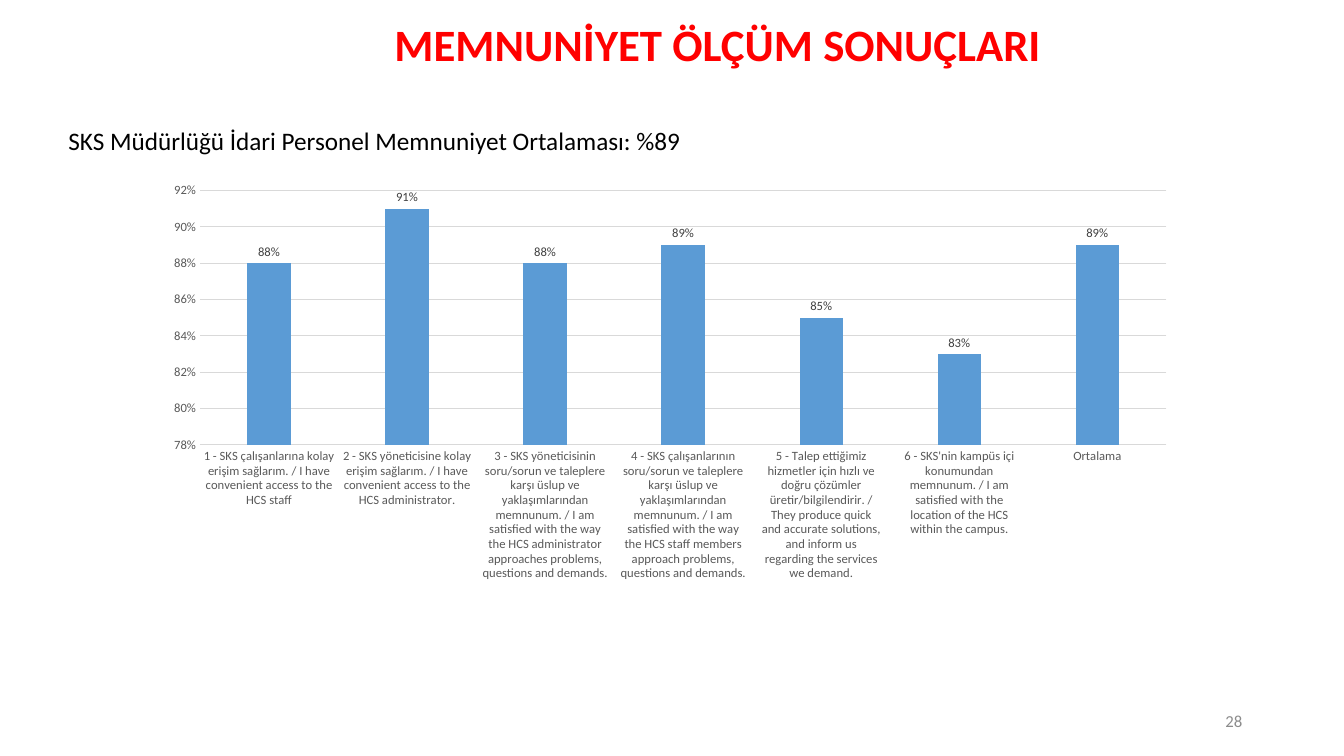
import pptx
import pptx.chart.data
import pptx.dml.color
import pptx.enum.chart
import pptx.enum.text
import pptx.oxml
import pptx.oxml.ns
import pptx.util

WIDTH, HEIGHT = 13.33, 7.5
FONT = "Calibri"
ALIGN = pptx.enum.text.PP_ALIGN
ANCHOR = pptx.enum.text.MSO_ANCHOR

TEXTS = [
    dict(text="28", at=(9.42, 6.95, 3, 0.4), size=12, color="8C8C8C",
         align=ALIGN.RIGHT, anchor=ANCHOR.MIDDLE),
    dict(text="MEMNUNİYET ÖLÇÜM SONUÇLARI", at=(2.67, 0.12, 8.9, 0.64), size=32,
         color="FF0000", align=ALIGN.CENTER, bold=True),
    dict(text="SKS Müdürlüğü İdari Personel Memnuniyet Ortalaması: %89",
         at=(0.58, 1.19, 10.69, 0.4), size=18, color="000000"),
]
SCORES = [
    ("1 - SKS çalışanlarına kolay erişim sağlarım. / I have convenient access "
     "to the HCS staff", 0.88),
    ("2 - SKS yöneticisine kolay erişim sağlarım. / I have convenient access "
     "to the HCS administrator.", 0.91),
    ("3 - SKS yöneticisinin soru/sorun ve taleplere karşı üslup ve yaklaşımlarından "
     "memnunum. / I am satisfied with the way the HCS administrator approaches "
     "problems, questions and demands.", 0.88),
    ("4 - SKS çalışanlarının soru/sorun ve taleplere karşı üslup ve yaklaşımlarından "
     "memnunum. / I am satisfied with the way the HCS staff members approach "
     "problems, questions and demands.", 0.89),
    ("5 - Talep ettiğimiz hizmetler için hızlı ve doğru çözümler üretir/bilgilendirir. "
     "/ They produce quick and accurate solutions, and inform us regarding the "
     "services we demand.", 0.85),
    ("6 - SKS'nin kampüs içi konumundan memnunum. / I am satisfied with the "
     "location of the HCS within the campus.", 0.83),
    ("Ortalama", 0.89),
]
CHART_AT = (0.58, 1.39, 11.69, 5.55)
PLOT_SHARES = dict(x=0.12, y=0.09, w=0.82, h=0.455)


def rgb(value):
    return pptx.dml.color.RGBColor.from_string(value)


def inches(lengths):
    return [pptx.util.Inches(length) for length in lengths]


def style_font(font, size, color, bold=False):
    font.name = FONT
    font.size = pptx.util.Pt(size)
    font.bold = bold
    font.color.rgb = rgb(color)


def style_line(line, color):
    line.color.rgb = rgb(color)
    line.width = pptx.util.Pt(0.75)


def add_text(page, text, at, size, color, align=ALIGN.LEFT, anchor=ANCHOR.TOP, bold=False):
    frame = page.shapes.add_textbox(*inches(at)).text_frame
    frame.word_wrap = True
    frame.vertical_anchor = anchor
    para = frame.paragraphs[0]
    para.alignment = align
    span = para.add_run()
    span.text = text
    style_font(span.font, size, color, bold)


def place_plot(chart):
    shares = "".join(f'<c:{key} val="{share}"/>' for key, share in PLOT_SHARES.items())
    layout = pptx.oxml.parse_xml(
        f'<c:layout {pptx.oxml.ns.nsdecls("c")}><c:manualLayout>'
        '<c:layoutTarget val="inner"/><c:xMode val="edge"/><c:yMode val="edge"/>'
        f'{shares}</c:manualLayout></c:layout>')
    area = chart._chartSpace.chart.plotArea
    for old in area.findall(pptx.oxml.ns.qn("c:layout")):
        area.remove(old)
    area.insert(0, layout)


def add_scores(page):
    data = pptx.chart.data.CategoryChartData(number_format="0%")
    data.categories = [question for question, score in SCORES]
    data.add_series("Series 1", [score for question, score in SCORES])
    kind = pptx.enum.chart.XL_CHART_TYPE.COLUMN_CLUSTERED
    chart = page.shapes.add_chart(kind, *inches(CHART_AT), data).chart
    chart.has_legend = False
    chart.has_title = False
    style_font(chart.font, 10, "000000")
    place_plot(chart)

    for axis in (chart.category_axis, chart.value_axis):
        axis.major_tick_mark = pptx.enum.chart.XL_TICK_MARK.NONE
        axis.minor_tick_mark = pptx.enum.chart.XL_TICK_MARK.NONE
        style_font(axis.tick_labels.font, 9, "595959")
    style_line(chart.category_axis.format.line, "D9D9D9")
    values = chart.value_axis
    values.minimum_scale, values.maximum_scale, values.major_unit = 0.78, 0.92, 0.02
    values.tick_labels.number_format = "0%"
    values.tick_labels.number_format_is_linked = False
    values.format.line.fill.background()
    style_line(values.major_gridlines.format.line, "D9D9D9")

    plot = chart.plots[0]
    plot.gap_width, plot.overlap = 219, -27
    plot.vary_by_categories = False
    bars = plot.series[0]
    bars.invert_if_negative = False
    bars.format.fill.solid()
    bars.format.fill.fore_color.rgb = rgb("5B9BD5")
    labels = bars.data_labels
    labels.show_value = True
    labels.position = pptx.enum.chart.XL_LABEL_POSITION.OUTSIDE_END
    labels.number_format = "0%"
    labels.number_format_is_linked = False
    style_font(labels.font, 9, "404040")


def main():
    deck = pptx.Presentation()
    deck.slide_width, deck.slide_height = inches((WIDTH, HEIGHT))
    page = deck.slides.add_slide(deck.slide_layouts[6])
    for item in TEXTS:
        add_text(page, **item)
    add_scores(page)
    deck.save("out.pptx")


if __name__ == "__main__":
    main()
